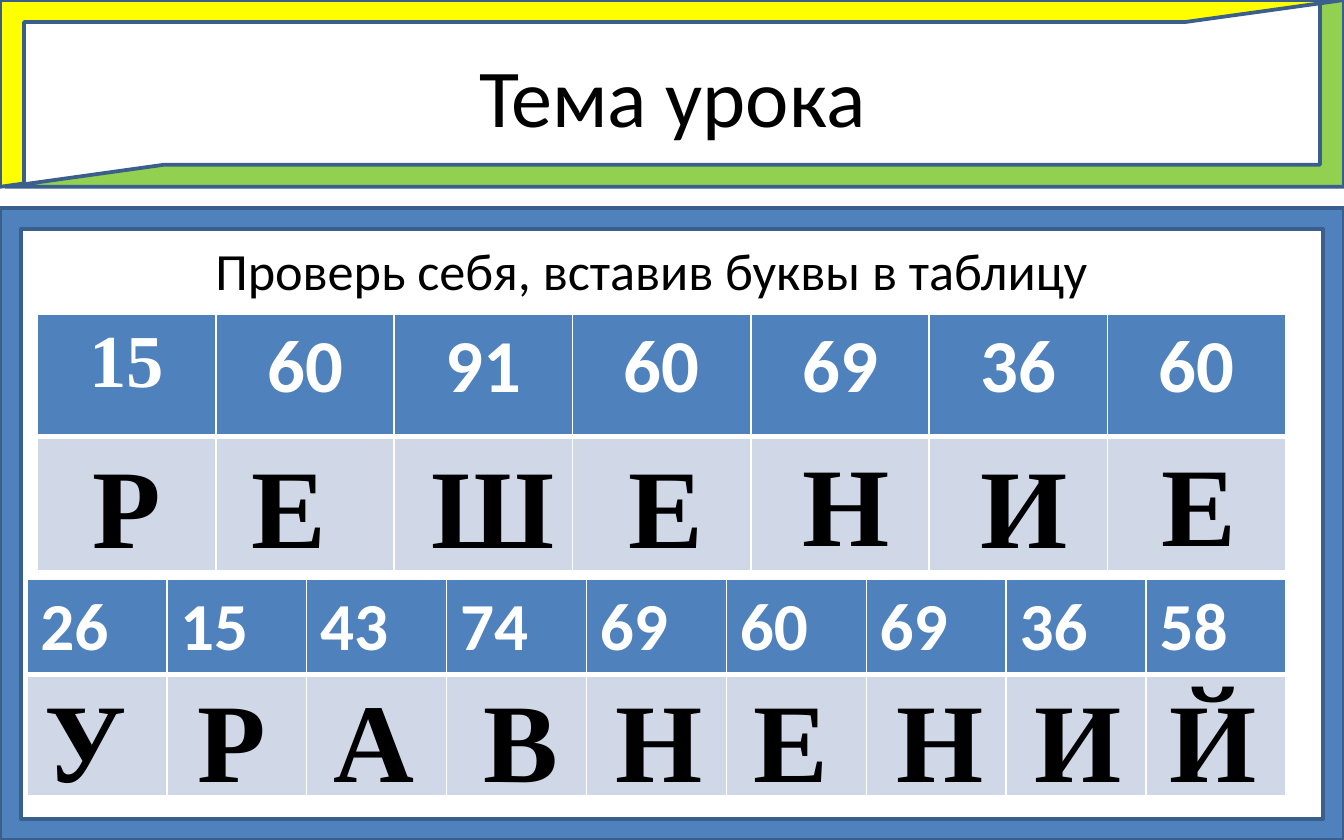
import pptx
import pptx.dml.color
import pptx.enum.shapes
import pptx.enum.text
import pptx.oxml
import pptx.oxml.ns
import pptx.util

Inches = pptx.util.Inches
Pt = pptx.util.Pt
RGBColor = pptx.dml.color.RGBColor
Shape = pptx.enum.shapes.MSO_SHAPE
Align = pptx.enum.text.PP_ALIGN
Anchor = pptx.enum.text.MSO_ANCHOR

BLACK = RGBColor(0x00, 0x00, 0x00)
WHITE = RGBColor(0xFF, 0xFF, 0xFF)
YELLOW = RGBColor(0xFF, 0xFF, 0x00)
GREEN = RGBColor(0x92, 0xD0, 0x50)
BLUE = RGBColor(0x4F, 0x81, 0xBD)
OUTLINE = RGBColor(0x3A, 0x5F, 0x8C)
PALE = RGBColor(0xD0, 0xD8, 0xE8)

TITLE = "Тема урока"
TASK = "Проверь себя, вставив буквы в таблицу"
FRAMES = [
    (Shape.HALF_FRAME, (0, 0, 10, 1.39), (0.118, 0.129), YELLOW, 0),
    (Shape.HALF_FRAME, (0.04, 0, 9.96, 1.39), (0.118, 0.129), GREEN, 180),
    (Shape.FRAME, (0, 1.55, 10, 4.7), (0.033,), BLUE, 0),
]
WORDS = [
    {
        "numbers": [15, 60, 91, 60, 69, 36, 60],
        "place": (0.28, 2.34, 9.29), "rows": (0.91, 1.0),
        "size": 40, "align": Align.CENTER, "first_font": "Times New Roman",
        "letters": [("Р", 0.59, 3.2), ("Е", 1.77, 3.2), ("Ш", 3.11, 3.2), ("Е", 4.58, 3.2),
                    ("Н", 5.87, 3.18), ("И", 7.2, 3.2), ("Е", 8.54, 3.18)],
    },
    {
        "numbers": [26, 15, 43, 74, 69, 60, 69, 36, 58],
        "place": (0.2, 4.31, 9.37), "rows": (0.71, 0.9),
        "size": 36, "align": Align.LEFT, "first_font": "Calibri",
        "letters": [("У", 0.23, 4.94), ("Р", 1.37, 4.94), ("А", 2.38, 4.94),
                    ("В", 3.5, 4.94), ("Н", 4.48, 4.94), ("Е", 5.51, 4.94),
                    ("Н", 6.57, 4.94), ("И", 7.6, 4.94), ("Й", 8.6, 4.94)],
    },
]


def write(frame, text, size=28, font="Calibri", color=BLACK, bold=False,
          align=Align.LEFT, anchor=Anchor.TOP):
    frame.word_wrap = True
    frame.vertical_anchor = anchor
    para = frame.paragraphs[0]
    para.alignment = align
    span = para.add_run()
    span.text = text
    span.font.size = Pt(size)
    span.font.name = font
    span.font.bold = bold
    span.font.color.rgb = color


def add_frame(page, kind, place, adjustments, color, rotation):
    shape = page.shapes.add_shape(kind, *map(Inches, place))
    for index, value in enumerate(adjustments):
        shape.adjustments[index] = value
    shape.rotation = rotation
    shape.shadow.inherit = False
    shape.fill.solid()
    shape.fill.fore_color.rgb = color
    shape.line.color.rgb = OUTLINE
    shape.line.width = Pt(2)


def style_cell(cell, color, **widths):
    properties = cell._tc.get_or_add_tcPr()
    for side in "LRTB":
        properties.append(pptx.oxml.parse_xml(
            f'<a:ln{side} {pptx.oxml.ns.nsdecls("a")} w="{Pt(widths.get(side, 1))}">'
            f'<a:solidFill><a:srgbClr val="{WHITE}"/></a:solidFill></a:ln{side}>'))
    cell.fill.solid()
    cell.fill.fore_color.rgb = color


def add_word_table(page, word):
    left, top, width = word["place"]
    count = len(word["numbers"])
    table = page.shapes.add_table(2, count, Inches(left), Inches(top),
                                  Inches(width), Inches(sum(word["rows"]))).table
    for row, height in zip(table.rows, word["rows"]):
        row.height = Inches(height)
    for index, number in enumerate(word["numbers"]):
        table.columns[index].width = Inches(width / count)
        header = table.cell(0, index)
        style_cell(header, BLUE, B=3)
        style_cell(table.cell(1, index), PALE, T=3)
        write(header.text_frame, str(number), size=word["size"], color=WHITE, bold=True,
              font="Calibri" if index else word["first_font"], align=word["align"])


def add_text(page, place, text, **style):
    box = page.shapes.add_textbox(*map(Inches, place))
    write(box.text_frame, text, **style)


def main():
    deck = pptx.Presentation()
    deck.slide_width, deck.slide_height = Inches(10), Inches(6.25)
    page = deck.slides.add_slide(deck.slide_layouts[5])
    for frame in FRAMES:
        add_frame(page, *frame)

    title = page.shapes.title
    title.left, title.top, title.width, title.height = map(Inches, (0.28, 0.25, 9.45, 0.91))
    write(title.text_frame, TITLE, size=44, align=Align.CENTER, anchor=Anchor.MIDDLE)
    title.element.getparent().append(title.element)
    add_text(page, (0.12, 1.55, 9.45, 0.91), TASK, align=Align.CENTER, anchor=Anchor.MIDDLE)

    for word in WORDS:
        add_word_table(page, word)
    for word in WORDS:
        for letter, left, top in word["letters"]:
            add_text(page, (left, top, 0.79, 1.11), letter,
                     size=60, font="Times New Roman", bold=True)
    deck.save("out.pptx")


if __name__ == "__main__":
    main()
